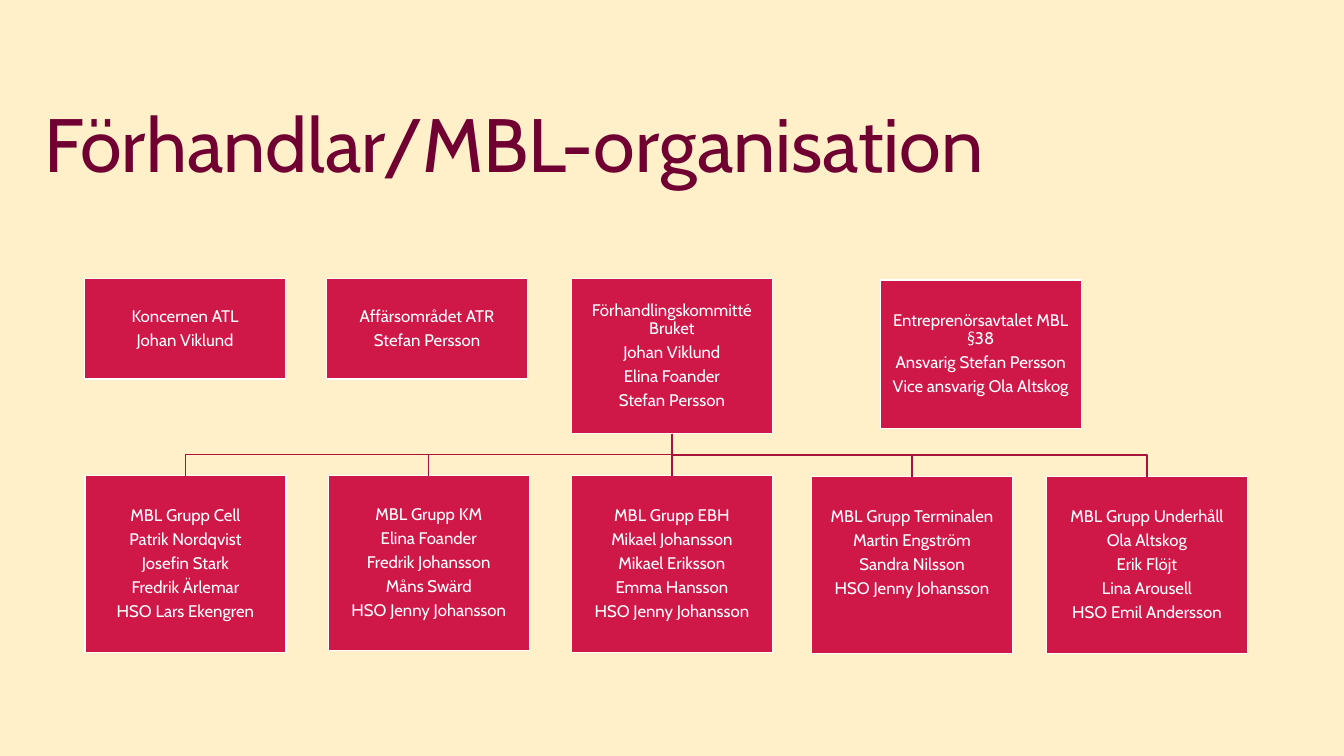
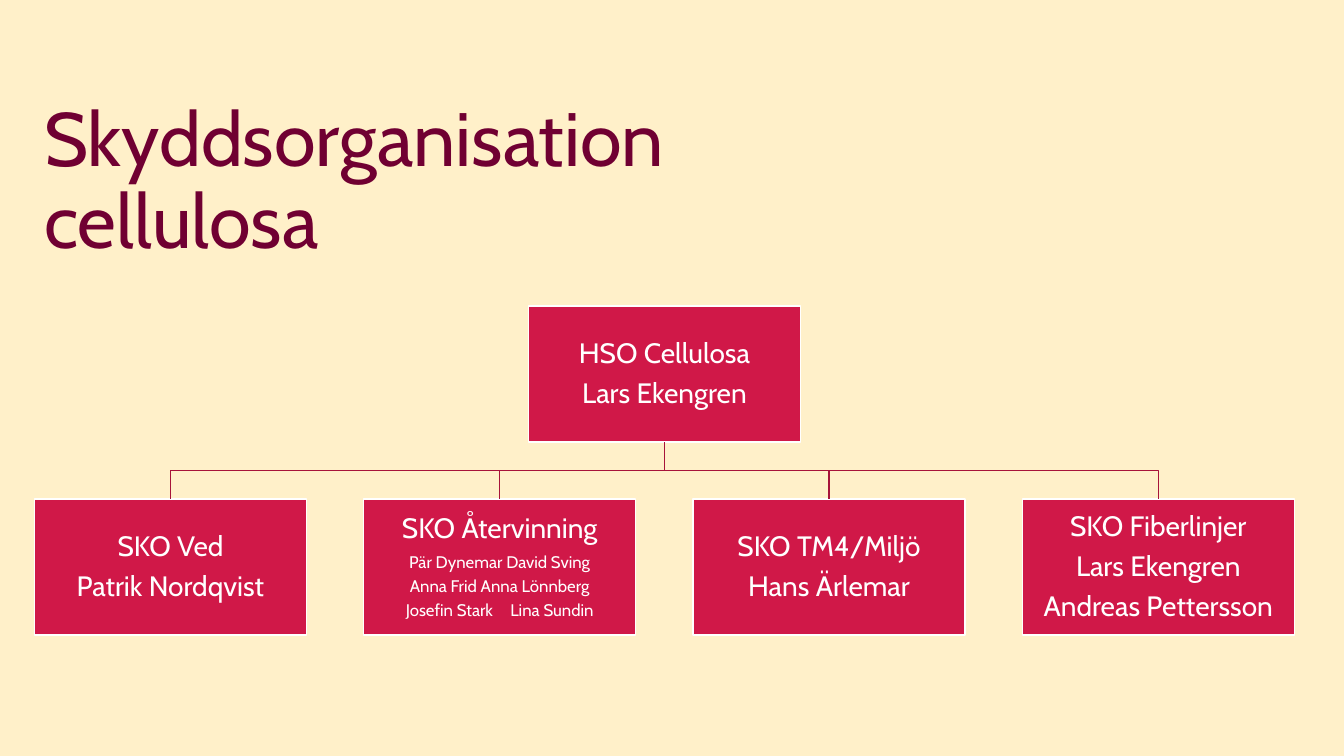
from pptx import Presentation
from pptx.dml.color import RGBColor
from pptx.enum.shapes import MSO_CONNECTOR, MSO_SHAPE
from pptx.enum.text import MSO_ANCHOR, MSO_AUTO_SIZE, PP_ALIGN
from pptx.oxml.ns import qn
from pptx.util import Pt
from lxml.etree import SubElement

CREAM = RGBColor(0xFF, 0xF0, 0xC9)
PLUM = RGBColor(0x70, 0x00, 0x32)
RED = RGBColor(0xD0, 0x18, 0x48)
WINE = RGBColor(0xA7, 0x13, 0x3A)
WHITE = RGBColor(0xFF, 0xFF, 0xFF)
FONT = "Cabin"


def add_box(slide, left, top, width, height, lines, head, body, foot=0.6):
    box = slide.shapes.add_shape(MSO_SHAPE.RECTANGLE, Pt(left), Pt(top), Pt(width), Pt(height))
    box.shadow.inherit = False
    box.fill.solid()
    box.fill.fore_color.rgb = RED
    box.line.color.rgb = WHITE
    box.line.width = Pt(1)
    frame = box.text_frame
    frame.word_wrap = True
    frame.vertical_anchor = MSO_ANCHOR.MIDDLE
    frame.margin_left = frame.margin_top = frame.margin_right = Pt(0.6)
    frame.margin_bottom = Pt(foot)
    frame.text = "\n".join(lines)
    for row, para in enumerate(frame.paragraphs):
        size = body if row else head
        para.alignment = PP_ALIGN.CENTER
        para.line_spacing = 0.9
        para.space_after = Pt(0.35 * size)
        para.font.name = FONT
        para.font.size = Pt(size)
        para.font.color.rgb = WHITE
    return box


def add_link(slide, chief, box):
    hub = chief.left + chief.width // 2
    base = chief.top + chief.height
    spot = box.left + box.width // 2
    if hub == spot:
        link = slide.shapes.add_connector(MSO_CONNECTOR.STRAIGHT, hub, base, spot, box.top)
        link.begin_connect(chief, 2)
        link.end_connect(box, 0)
        SubElement(link._element.spPr, qn("a:effectLst"))
    else:
        mid = (base + box.top) // 2
        pen = slide.shapes.build_freeform(hub, base)
        pen.add_line_segments([(hub, mid), (spot, mid), (spot, box.top)], close=False)
        link = pen.convert_to_shape()
        link.fill.background()
        link.shadow.inherit = False
    link.line.color.rgb = WINE
    link.line.width = Pt(1)


deck = Presentation()
deck.slide_width = Pt(960)
deck.slide_height = Pt(540)
back = deck.slide_master.background.fill
back.solid()
back.fore_color.rgb = CREAM

charts = [
    {
        "title": "Förhandlar/MBL-organisation",
        "area": (813, 81),
        "width": 143.6,
        "size": 12,
        "chief": (408.2, 198.9, 110.8, ["Förhandlingskommitté Bruket", "Johan Viklund", "Elina Foander", "Stefan Persson"]),
        "groups": [
            (60.7, 339.8, 126.2, ["MBL Grupp Cell", "Patrik Nordqvist", "Josefin Stark", "Fredrik Ärlemar", "HSO Lars Ekengren"]),
            (234.5, 339.8, 124.8, ["MBL Grupp KM", "Elina Foander", "Fredrik Johansson", "Måns Swärd", "HSO Jenny Johansson"]),
            (408.2, 339.8, 126.2, ["MBL Grupp EBH", "Mikael Johansson", "Mikael Eriksson", "Emma Hansson", "HSO Jenny Johansson"]),
            (579.7, 340.4, 126.6, ["MBL Grupp Terminalen", "Martin Engström", "Sandra Nilsson", "HSO Jenny Johansson"], 12, 18),
            (747.5, 340.4, 126.6, ["MBL Grupp Underhåll", "Ola Altskog", "Erik Flöjt", "Lina Arousell", "HSO Emil Andersson"]),
        ],
        "loose": [
            (60.5, 198.9, 71.8, ["Koncernen ATL", "Johan Viklund"]),
            (233.3, 198.9, 71.8, ["Affärsområdet ATR", "Stefan Persson"]),
            (628.8, 200, 106, ["Entreprenörsavtalet MBL §38", "Ansvarig Stefan Persson", "Vice ansvarig Ola Altskog"]),
        ],
    },
    {
        "title": "Skyddsorganisation cellulosa",
        "area": (510, 135),
        "width": 194.4,
        "size": 20,
        "chief": (377.5, 218.6, 97.2, ["HSO Cellulosa", "Lars Ekengren"]),
        "groups": [
            (24.6 + 235.2 * step, 356.4, 97.2, *rest)
            for step, rest in enumerate([
                (["SKO Ved", "Patrik Nordqvist"],),
                (["SKO Återvinning", "Pär Dynemar David Sving", "Anna Frid Anna Lönnberg", "Josefin Stark\t Lina Sundin"], 12),
                (["SKO TM4/Miljö", "Hans Ärlemar"],),
                (["SKO Fiberlinjer", "Lars Ekengren", "Andreas Pettersson"],),
            ])
        ],
        "loose": [],
    },
]

for chart in charts:
    slide = deck.slides.add_slide(deck.slide_layouts[5])
    title = slide.shapes.title
    title.left, title.top = Pt(24.3), Pt(57.5)
    title.width, title.height = [Pt(side) for side in chart["area"]]
    frame = title.text_frame
    frame.text = chart["title"]
    frame.word_wrap = True
    frame.auto_size = MSO_AUTO_SIZE.NONE
    frame.vertical_anchor = MSO_ANCHOR.BOTTOM
    para = frame.paragraphs[0]
    para.alignment = PP_ALIGN.LEFT
    para.line_spacing = 0.9
    para.font.name = FONT
    para.font.size = Pt(54)
    para.font.color.rgb = PLUM

    boxes = []
    for left, top, height, lines, *extra in [chart["chief"]] + chart["groups"] + chart["loose"]:
        body = extra[0] if extra else chart["size"]
        boxes.append(add_box(slide, left, top, chart["width"], height, lines, chart["size"], body, *extra[1:]))

    for box in boxes[1:len(chart["groups"]) + 1]:
        add_link(slide, boxes[0], box)

deck.save("out.pptx")
